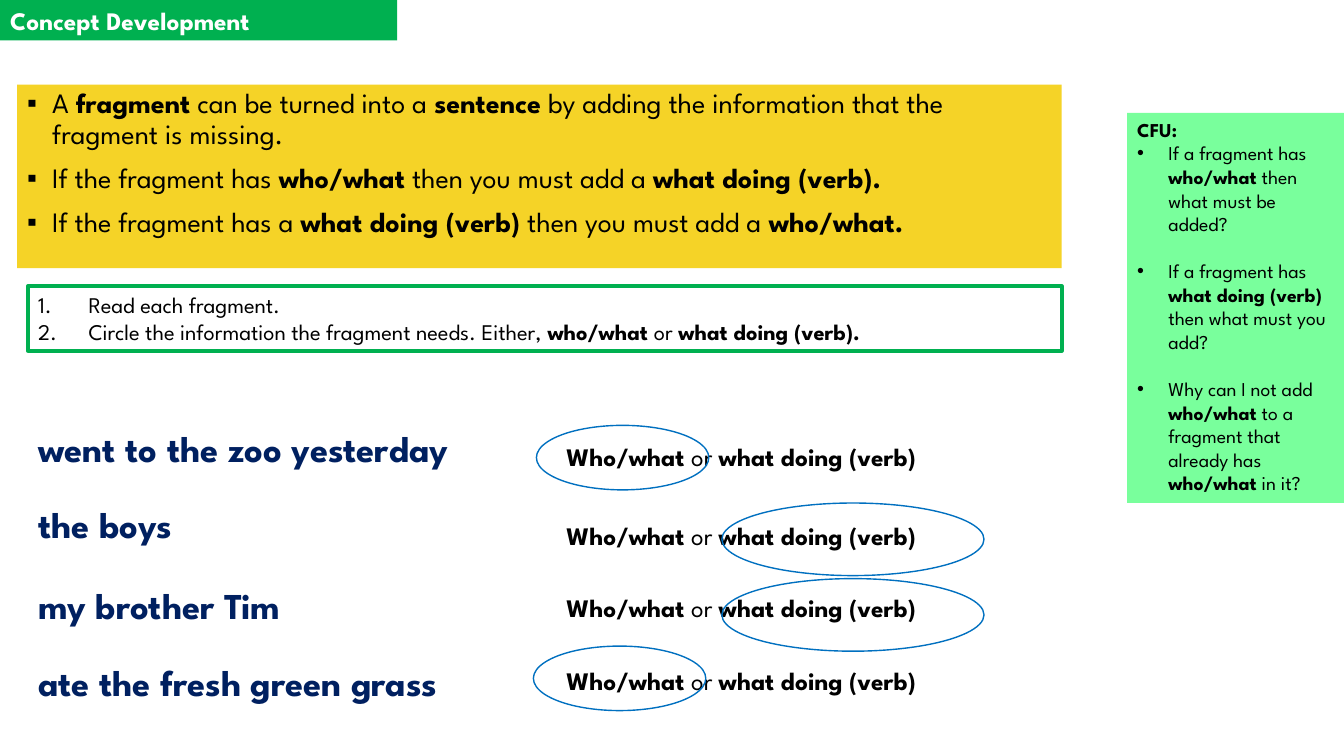
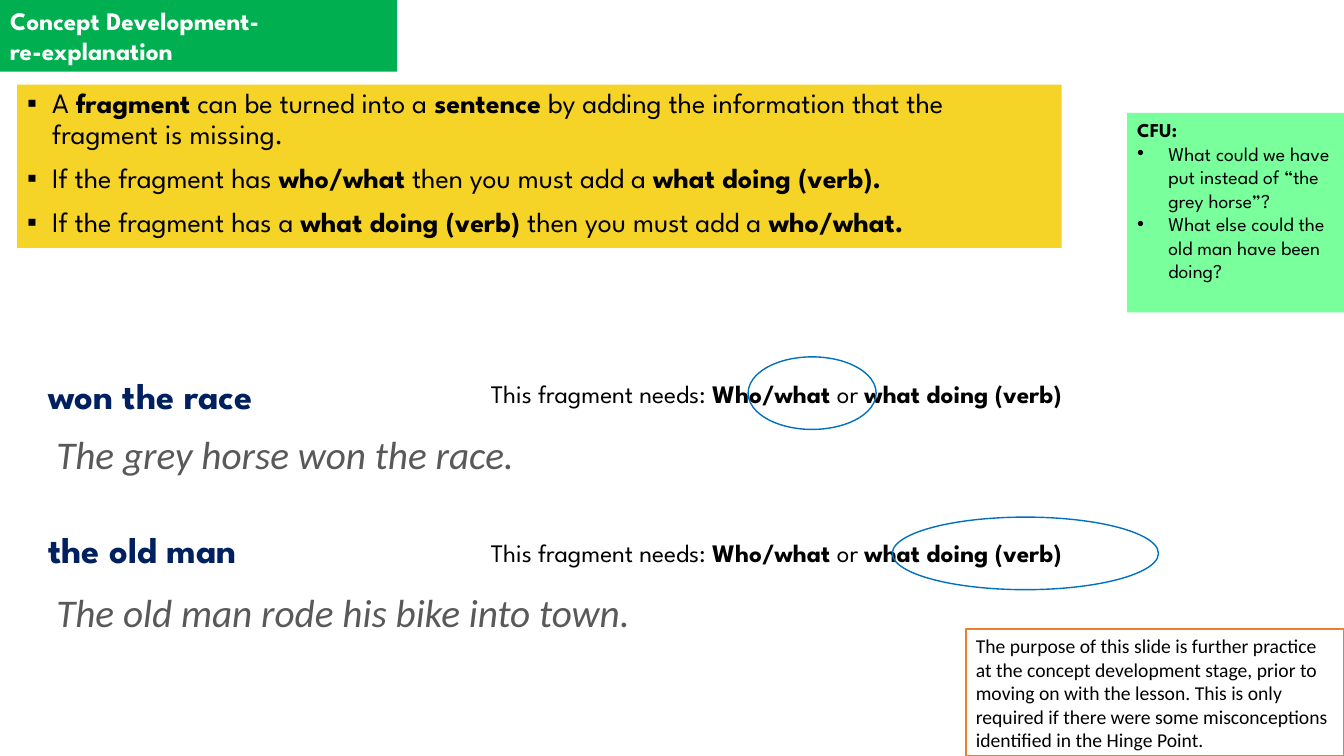
from dataclasses import dataclass

from lxml.etree import SubElement
from pptx import Presentation
from pptx.dml.color import RGBColor
from pptx.enum.shapes import MSO_SHAPE
from pptx.enum.text import MSO_ANCHOR, MSO_AUTO_SIZE, PP_ALIGN
from pptx.oxml.ns import qn
from pptx.util import Inches, Pt

# Shared style
BLACK = RGBColor(0x00, 0x00, 0x00)
WHITE = RGBColor(0xFF, 0xFF, 0xFF)
GREEN = RGBColor(0x00, 0xB0, 0x50)
MINT = RGBColor(0x79, 0xFF, 0x9C)
YELLOW = RGBColor(0xF5, 0xD3, 0x27)
NAVY = RGBColor(0x00, 0x20, 0x60)
BLUE = RGBColor(0x00, 0x70, 0xC0)
ORANGE = RGBColor(0xED, 0x7D, 0x31)
GREY = RGBColor(0x59, 0x59, 0x59)
MAIN_FONT = "League Spartan"
PLAIN_FONT = "Calibri"
NUMBERED = "1."

# Text between double asterisks is bold
CHOICE = "**Who/what **or **what doing (verb)**"
RULES = [
    "A **fragment** can be turned into a **sentence** by adding the information "
    "that the fragment is missing.",
    "If the fragment has **who/what** then you must add a **what doing (verb).**",
    "If the fragment has a **what doing (verb)** then you must add a** who/what.**",
]


@dataclass(frozen=True)
class Box:
    left: float
    top: float
    width: float
    height: float

    def lengths(self):
        return tuple(Inches(n) for n in (self.left, self.top, self.width, self.height))


@dataclass(frozen=True)
class Question:
    fragment: str
    fragment_top: float
    choice_top: float
    circle: Box
    answer: str = ""
    answer_top: float = 0


FIRST_QUESTIONS = [
    Question("went to the zoo yesterday", 4.23, 4.33, Box(5.32, 4.22, 1.71, 0.64)),
    Question("the boys", 4.98, 5.11, Box(7.16, 4.99, 2.6, 0.72)),
    Question("my brother Tim", 5.79, 5.83, Box(7.16, 5.74, 2.6, 0.72)),
    Question("ate the fresh green grass", 6.55, 6.55, Box(5.29, 6.41, 1.71, 0.64)),
]
EXTRA_QUESTIONS = [
    Question("won the race", 3.7, 3.7, Box(7.42, 3.54, 1.27, 0.72),
             "The grey horse won the race.", 4.22),
    Question("the old man", 5.23, 5.28, Box(8.85, 5.13, 2.64, 0.72),
             "The old man rode his bike into town.", 5.79),
]


def set_bullet(paragraph, bullet: str, indent: float) -> None:
    properties = paragraph._p.get_or_add_pPr()
    properties.set("marL", str(Inches(indent)))
    properties.set("indent", str(-Inches(indent)))
    if bullet == NUMBERED:
        SubElement(properties, qn("a:buFont"), typeface=MAIN_FONT)
        SubElement(properties, qn("a:buAutoNum"), type="arabicPeriod")
    else:
        SubElement(properties, qn("a:buFont"), typeface="Arial")
        SubElement(properties, qn("a:buChar"), char=bullet)


def write_text(shape, texts: list[str], *, size: float, color: RGBColor = BLACK,
               font: str = MAIN_FONT, bold: bool = False, italic: bool = False,
               bullet: str = "", indent: float = 0, heading: str = "",
               line_spacing: float = 1, gap: float = 0) -> None:
    """Fill a shape; the gap separates the texts, not the heading."""
    frame = shape.text_frame
    frame.word_wrap = True
    frame.auto_size = MSO_AUTO_SIZE.NONE
    frame.vertical_anchor = MSO_ANCHOR.TOP
    frame.margin_left = frame.margin_right = Inches(0.1)
    frame.margin_top = frame.margin_bottom = Inches(0.05)
    lines = [f"**{heading}**"] if heading else []
    first_text = len(lines)
    for index, line in enumerate(lines + texts):
        paragraph = frame.add_paragraph() if index else frame.paragraphs[0]
        if bullet and index >= first_text:
            set_bullet(paragraph, bullet, indent)
        paragraph.alignment = PP_ALIGN.LEFT
        paragraph.line_spacing = line_spacing
        paragraph.space_before = Pt(gap if index > first_text else 0)
        for part, words in enumerate(line.split("**")):
            if not words:
                continue
            run = paragraph.add_run()
            run.text = words
            run.font.name = font
            run.font.size = Pt(size)
            run.font.bold = bold or part % 2 == 1
            run.font.italic = italic
            run.font.color.rgb = color


def add_panel(slide, box: Box, fill: RGBColor | None = None,
              line: RGBColor | None = None, line_width: float = 1,
              kind: MSO_SHAPE = MSO_SHAPE.RECTANGLE):
    shape = slide.shapes.add_shape(kind, *box.lengths())
    shape.shadow.inherit = False
    if fill is None:
        shape.fill.background()
    else:
        shape.fill.solid()
        shape.fill.fore_color.rgb = fill
    if line is None:
        shape.line.fill.background()
    else:
        shape.line.color.rgb = line
        shape.line.width = Pt(line_width)
    return shape


def add_label(slide, box: Box, text: str, **text_format) -> None:
    write_text(slide.shapes.add_textbox(*box.lengths()), [text], **text_format)


def add_lesson_slide(presentation, title: list[str], title_height: float,
                     rules_height: float, checks: list[str], checks_height: float,
                     check_gap: float = 0):
    """Add a slide with its title band, rules panel and check panel."""
    slide = presentation.slides.add_slide(presentation.slide_layouts[5])
    band = slide.shapes.title
    band.left, band.top, band.width, band.height = Box(0, 0, 3.94, title_height).lengths()
    band.fill.solid()
    band.fill.fore_color.rgb = GREEN
    write_text(band, title, size=18, color=WHITE, bold=True)

    rules = add_panel(slide, Box(0.17, 0.84, 10.36, rules_height), YELLOW)
    write_text(rules, RULES, size=20, bullet="▪", indent=0.25,
               line_spacing=0.9, gap=10)
    check = add_panel(slide, Box(11.18, 1.12, 2.15, checks_height), MINT)
    write_text(check, checks, size=14, heading="CFU:", bullet="•", indent=0.31,
               gap=check_gap)
    return slide


def add_questions(slide, questions: list[Question], fragment_left: float,
                  choice_left: float, choice_width: float, choice: str) -> None:
    for question in questions:
        add_label(slide, Box(fragment_left, question.fragment_top, 5, 0.6),
                  question.fragment, size=26, color=NAVY, bold=True, line_spacing=0.9)
        add_label(slide, Box(choice_left, question.choice_top, choice_width, 0.4),
                  choice, size=18)
        add_panel(slide, question.circle, line=BLUE, kind=MSO_SHAPE.OVAL)
        if question.answer:
            add_label(slide, Box(0.46, question.answer_top, 10.52, 0.57),
                      question.answer, size=28, font=PLAIN_FONT, color=GREY, italic=True)


def build_development(presentation) -> None:
    slide = add_lesson_slide(
        presentation, ["Concept Development"], 0.4, 1.82,
        ["If a fragment has **who/what** then what must be added?",
         "If a fragment has **what doing (verb) **then what must you add?",
         "Why can I not add **who/what** to a fragment that already has "
         "**who/what** in it?"],
        3.87, check_gap=17)
    # Task steps
    steps = add_panel(slide, Box(0.28, 2.84, 10.25, 0.64), WHITE, GREEN, 3)
    write_text(steps, ["Read each fragment.",
                       "Circle the information the fragment needs. Either, "
                       "**who/what **or **what doing (verb).**"],
               size=16, bullet=NUMBERED, indent=0.5)
    add_questions(slide, FIRST_QUESTIONS, 0.28, 5.52, 3.98, CHOICE)


def build_explanation(presentation) -> None:
    slide = add_lesson_slide(
        presentation, ["Concept Development-", "re-explanation"], 0.71, 1.62,
        ["What could we have put instead of “the grey horse”?",
         "What else could the old man have been doing?"], 1.98)
    add_questions(slide, EXTRA_QUESTIONS, 0.38, 4.77, 6.54,
                  f"This fragment needs: {CHOICE}")
    # Teacher note
    note = add_panel(slide, Box(9.58, 6.24, 3.75, 1.26), WHITE, ORANGE)
    write_text(note, ["The purpose of this slide is further practice at the concept "
                      "development stage, prior to moving on with the lesson. This is "
                      "only required if there were some misconceptions identified in "
                      "the Hinge Point."], size=14, font=PLAIN_FONT)


def main() -> None:
    presentation = Presentation()
    presentation.slide_width = Inches(13.33)
    presentation.slide_height = Inches(7.5)
    build_development(presentation)
    build_explanation(presentation)
    presentation.save("out.pptx")


if __name__ == "__main__":
    main()
